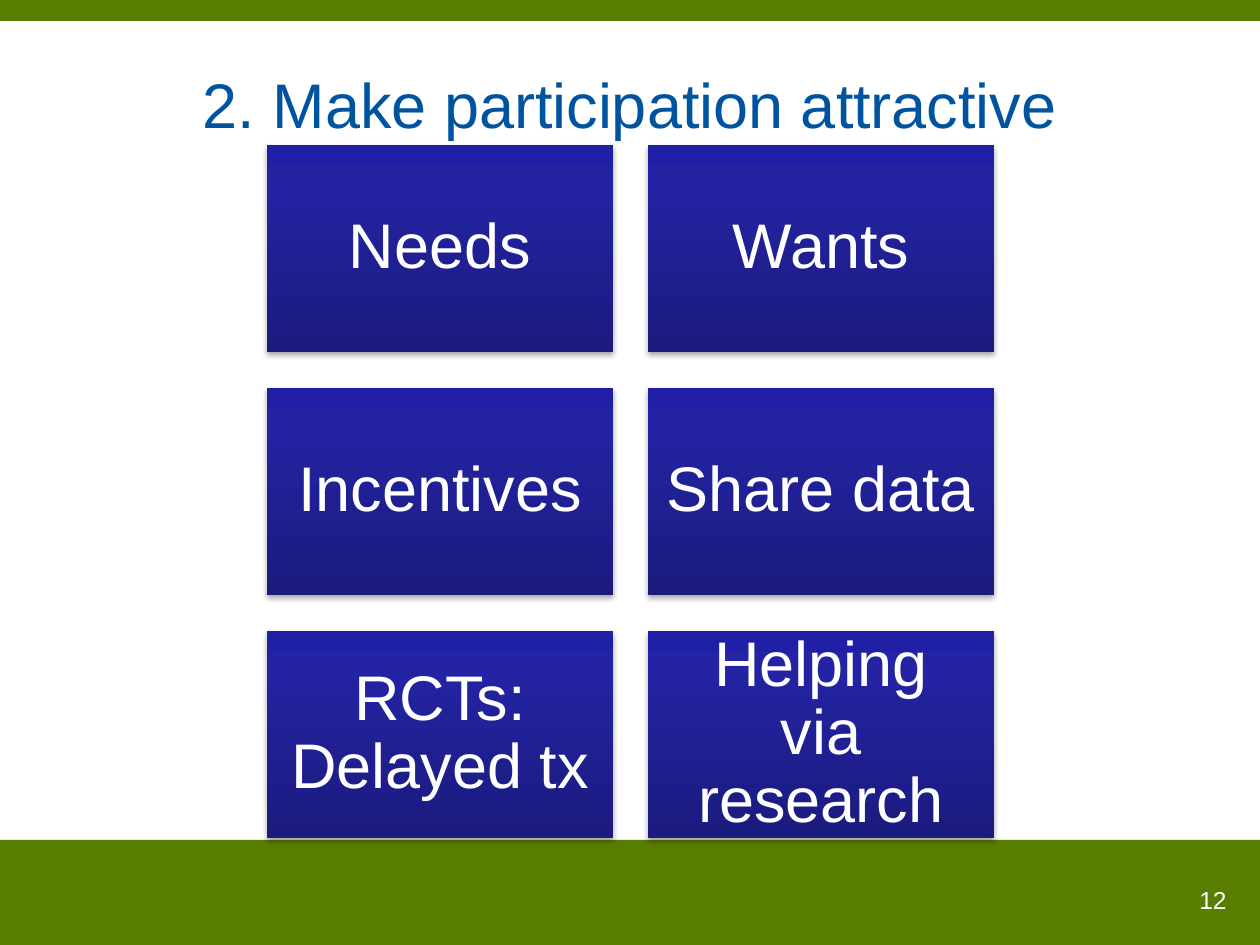
from dataclasses import dataclass

import lxml.etree
import pptx
import pptx.dml.color
import pptx.enum.shapes
import pptx.enum.text
import pptx.oxml
import pptx.oxml.ns
import pptx.util

ALIGN = pptx.enum.text.PP_ALIGN
ANCHOR = pptx.enum.text.MSO_ANCHOR
PX_PER_INCH = 126


@dataclass(frozen=True)
class Theme:
    font: str = "Arial"
    large: int = 36
    small: int = 14
    green: str = "577E00"
    title: str = "00549F"
    light: str = "FFFFFF"
    shadow: str = "000000"
    card_stops: tuple = ((0, "1B1B7E"), (80, "2323A3"), (100, "2020A6"))


@dataclass(frozen=True)
class Box:
    left: int
    top: int
    width: int
    height: int


THEME = Theme()
SLIDE = Box(0, 0, 1260, 945)
BANDS = (Box(0, 840, 1260, 105), Box(0, 0, 1260, 21))
TITLE = Box(63, 38, 1134, 130)
PAGE_NUMBER = Box(1113, 879, 126, 66)
FIRST_CARD = Box(267, 145, 346, 207)
COLUMN_STEP, ROW_STEP = 381, 243
CARD_INSET = 18
CARDS = (
    ("Needs", "Wants"),
    ("Incentives", "Share data"),
    ("RCTs: Delayed tx", "Helping via research"),
)


def px(length: int) -> pptx.util.Emu:
    return pptx.util.Emu(round(length * 914400 / PX_PER_INCH))


def place(box: Box) -> tuple:
    return px(box.left), px(box.top), px(box.width), px(box.height)


def rgb(color: str) -> pptx.dml.color.RGBColor:
    return pptx.dml.color.RGBColor.from_string(color)


def write(shape, text: str, *, size: int, color: str, align=ALIGN.CENTER,
          anchor=ANCHOR.MIDDLE, inset: int | None = None,
          line_spacing: float | None = None) -> None:
    frame = shape.text_frame
    frame.word_wrap = True
    frame.vertical_anchor = anchor
    if inset is not None:
        frame.margin_left = frame.margin_right = px(inset)
        frame.margin_top = frame.margin_bottom = px(inset)
    paragraph = frame.paragraphs[0]
    paragraph.alignment = align
    paragraph.line_spacing = line_spacing
    run = paragraph.add_run()
    run.text = text
    run.font.name = THEME.font
    run.font.size = pptx.util.Pt(size)
    run.font.color.rgb = rgb(color)


def add_rectangle(slide, box: Box, fill: str):
    shape = slide.shapes.add_shape(
        pptx.enum.shapes.MSO_SHAPE.RECTANGLE, *place(box))
    shape.shadow.inherit = False
    shape.fill.solid()
    shape.fill.fore_color.rgb = rgb(fill)
    shape.line.fill.background()
    return shape


def add_gradient(shape) -> None:
    """Replace the solid fill by the card gradient, running upwards."""
    stops = "".join(
        f'<a:gs pos="{position * 1000}"><a:srgbClr val="{color}"/></a:gs>'
        for position, color in THEME.card_stops)
    gradient = pptx.oxml.parse_xml(
        f'<a:gradFill {pptx.oxml.ns.nsdecls("a")} rotWithShape="1">'
        f'<a:gsLst>{stops}</a:gsLst><a:lin ang="16200000" scaled="0"/></a:gradFill>')
    properties = shape.element.spPr
    solid = properties.find(pptx.oxml.ns.qn("a:solidFill"))
    properties.replace(solid, gradient)


def add_shadow(shape) -> None:
    effects = shape.element.spPr.find(pptx.oxml.ns.qn("a:effectLst"))
    effects.append(pptx.oxml.parse_xml(
        f'<a:outerShdw {pptx.oxml.ns.nsdecls("a")} blurRad="40000" dist="23000" '
        f'dir="5400000" rotWithShape="0"><a:srgbClr val="{THEME.shadow}">'
        '<a:alpha val="35000"/></a:srgbClr></a:outerShdw>'))


def add_card(slide, box: Box, text: str) -> None:
    card = add_rectangle(slide, box, THEME.card_stops[0][1])
    add_gradient(card)
    add_shadow(card)
    write(card, text, size=THEME.large, color=THEME.light,
          inset=CARD_INSET, line_spacing=0.9)


def main() -> None:
    presentation = pptx.Presentation()
    presentation.slide_width = px(SLIDE.width)
    presentation.slide_height = px(SLIDE.height)
    slide = presentation.slides.add_slide(presentation.slide_layouts[6])

    for band in BANDS:
        add_rectangle(slide, band, THEME.green)

    for row, labels in enumerate(CARDS):
        for column, label in enumerate(labels):
            box = Box(FIRST_CARD.left + column * COLUMN_STEP,
                      FIRST_CARD.top + row * ROW_STEP,
                      FIRST_CARD.width, FIRST_CARD.height)
            add_card(slide, box, label)

    title = slide.shapes.add_textbox(*place(TITLE))
    write(title, "2. Make participation attractive",
          size=THEME.large, color=THEME.title)
    page_number = slide.shapes.add_textbox(*place(PAGE_NUMBER))
    write(page_number, "12", size=THEME.small, color=THEME.light,
          align=ALIGN.RIGHT, anchor=ANCHOR.TOP)

    presentation.save("out.pptx")


if __name__ == "__main__":
    main()
